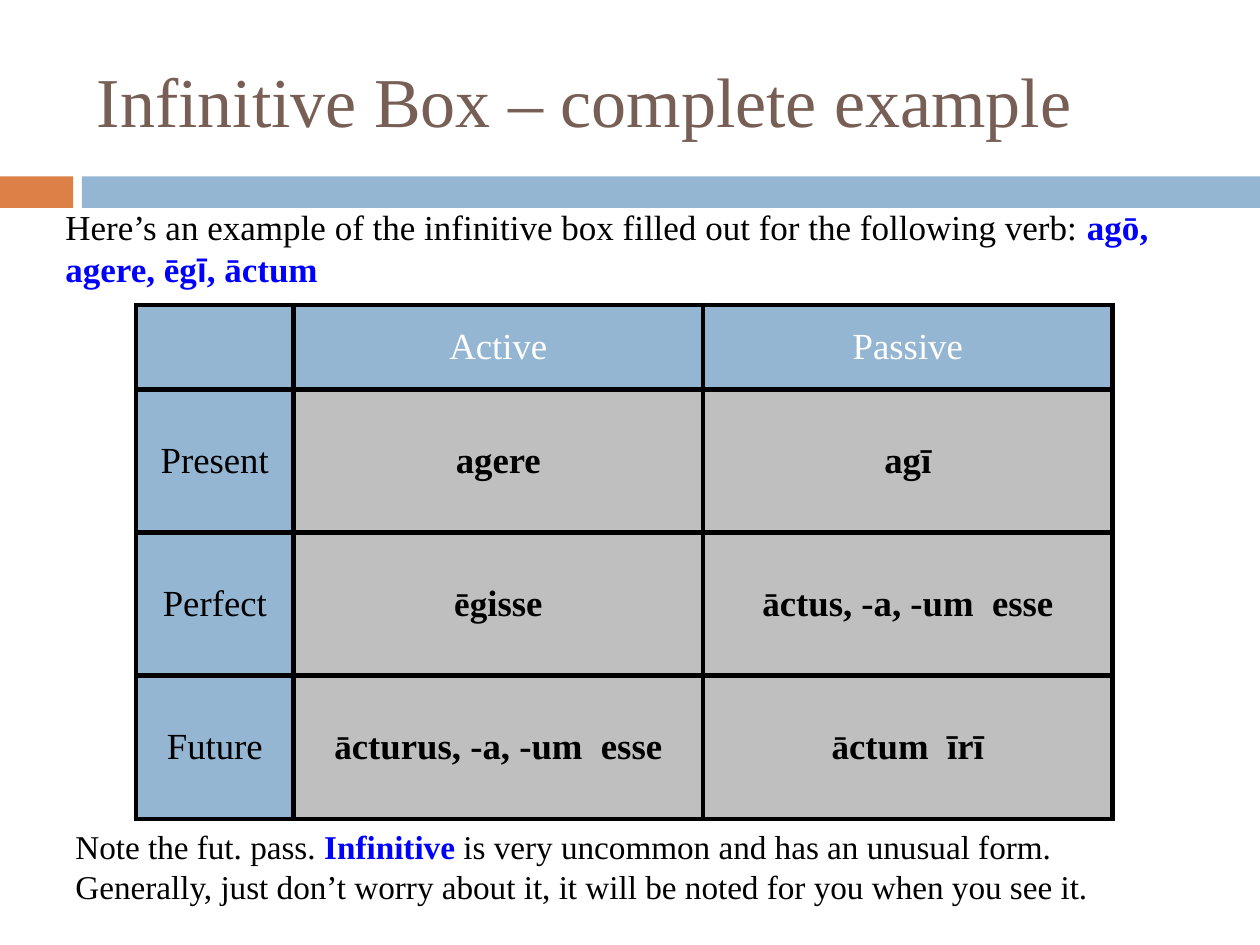
import pptx
import pptx.dml.color
import pptx.enum.shapes
import pptx.enum.text
import pptx.oxml
import pptx.oxml.ns
import pptx.util

Inches = pptx.util.Inches
RGBColor = pptx.dml.color.RGBColor
ANCHOR = pptx.enum.text.MSO_ANCHOR
ALIGN = pptx.enum.text.PP_ALIGN

BLACK = RGBColor(0x00, 0x00, 0x00)
WHITE = RGBColor(0xFF, 0xFF, 0xFF)
BLUE = RGBColor(0x00, 0x00, 0xFF)
SKY = RGBColor(0x94, 0xB6, 0xD2)
RUST = RGBColor(0xDD, 0x80, 0x47)
BROWN = RGBColor(0x77, 0x5F, 0x55)
GRAY = RGBColor(0xBF, 0xBF, 0xBF)

SERIF = "Times New Roman"
KEY = {"color": BLUE, "bold": True}
SMALL = {"size": 20}
FORMS = [
    ("Present", [("agere", {})], [("agī", {})]),
    ("Perfect", [("ēg", SMALL), ("isse", {})],
     [("ā", SMALL), ("ctus, -a, -um  esse", {})]),
    ("Future", [("ā", SMALL), ("cturus, -a, -um  esse", {})],
     [("ā", SMALL), ("ctum  īrī", {})]),
]


def write(frame, parts, base):
    """Fill the first paragraph with (text, format) runs on top of a base format."""
    para = frame.paragraphs[0]
    for text, extra in parts:
        look = {"name": SERIF, "color": BLACK, "bold": False, **base, **extra}
        run = para.add_run()
        run.text = text
        run.font.color.rgb = look.pop("color")
        look["size"] = pptx.util.Pt(look["size"])
        for key, value in look.items():
            setattr(run.font, key, value)
    return para


def add_text(slide, box, parts, base, anchor=ANCHOR.TOP):
    frame = slide.shapes.add_textbox(*map(Inches, box)).text_frame
    frame.word_wrap = True
    frame.vertical_anchor = anchor
    write(frame, parts, base)


def add_band(slide, box):
    left, top, width, height = box
    tab, gap = 0.58, 0.07
    start = tab + gap
    for shift, span, color in ((0, tab, RUST), (start, width - start, SKY)):
        bar = slide.shapes.add_shape(
            pptx.enum.shapes.MSO_SHAPE.RECTANGLE,
            Inches(left + shift), Inches(top), Inches(span), Inches(height))
        bar.shadow.inherit = False
        bar.fill.solid()
        bar.fill.fore_color.rgb = color
        bar.line.fill.background()


def add_edges(cell):
    """Draw a 3 point black border; borders must come before the cell fill."""
    props = cell._tc.get_or_add_tcPr()
    for spot, side in enumerate(("lnL", "lnR", "lnT", "lnB")):
        props.insert(spot, pptx.oxml.parse_xml(
            f'<a:{side} {pptx.oxml.ns.nsdecls("a")} w="{pptx.util.Pt(3)}">'
            f'<a:solidFill><a:srgbClr val="{BLACK}"/></a:solidFill></a:{side}>'))


def set_cell(cell, fill, parts, base):
    cell.fill.solid()
    cell.fill.fore_color.rgb = fill
    cell.vertical_anchor = ANCHOR.MIDDLE
    add_edges(cell)
    write(cell.text_frame, parts, {"size": 21, **base}).alignment = ALIGN.CENTER


def add_forms(slide, box):
    left, top, width, height = box
    side, head = 1.25, 0.67
    count = len(FORMS)
    table = slide.shapes.add_table(count + 1, 3, *map(Inches, box)).table
    for col, span in zip(table.columns, [side] + [(width - side) / 2] * 2):
        col.width = Inches(span)
    for row, span in zip(table.rows, [head] + [(height - head) / count] * count):
        row.height = Inches(span)
    for col, voice in enumerate(("", "Active", "Passive")):
        parts = [(voice, {})] if voice else []
        set_cell(table.cell(0, col), SKY, parts, {"color": WHITE})
    for row, (tense, *verbs) in enumerate(FORMS, 1):
        set_cell(table.cell(row, 0), SKY, [(tense, {})], {})
        for col, parts in enumerate(verbs, 1):
            set_cell(table.cell(row, col), GRAY, parts, {"bold": True})


def main():
    deck = pptx.Presentation()
    deck.slide_width, deck.slide_height = Inches(10), Inches(7.5)
    slide = deck.slides.add_slide(deck.slide_layouts[6])
    add_band(slide, (0, 1.4, 10, 0.25))
    add_text(slide, (0.67, 0.25, 8.92, 1.08),
             [("Infinitive Box – complete example", {})],
             {"size": 40, "color": BROWN}, ANCHOR.MIDDLE)
    add_forms(slide, (1.08, 2.42, 7.75, 4.08))
    add_text(slide, (0.42, 1.58, 9.25, 0.77), [
        ("Here’s an example of the infinitive box filled out "
         "for the following verb: ", {}),
        ("agō, agere, ēg", KEY),
        ("ī", {**KEY, "name": "Arial"}),
        (", āctum", KEY),
    ], {"size": 20})
    add_text(slide, (0.5, 6.51, 9.08, 0.74), [
        ("Note the fut. pass. ", {}),
        ("Infinitive", KEY),
        (" is very uncommon and has an unusual form. Generally, just don’t "
         "worry about it, it will be noted for you when you see it.", {}),
    ], {"size": 19})
    deck.save("out.pptx")


if __name__ == "__main__":
    main()
